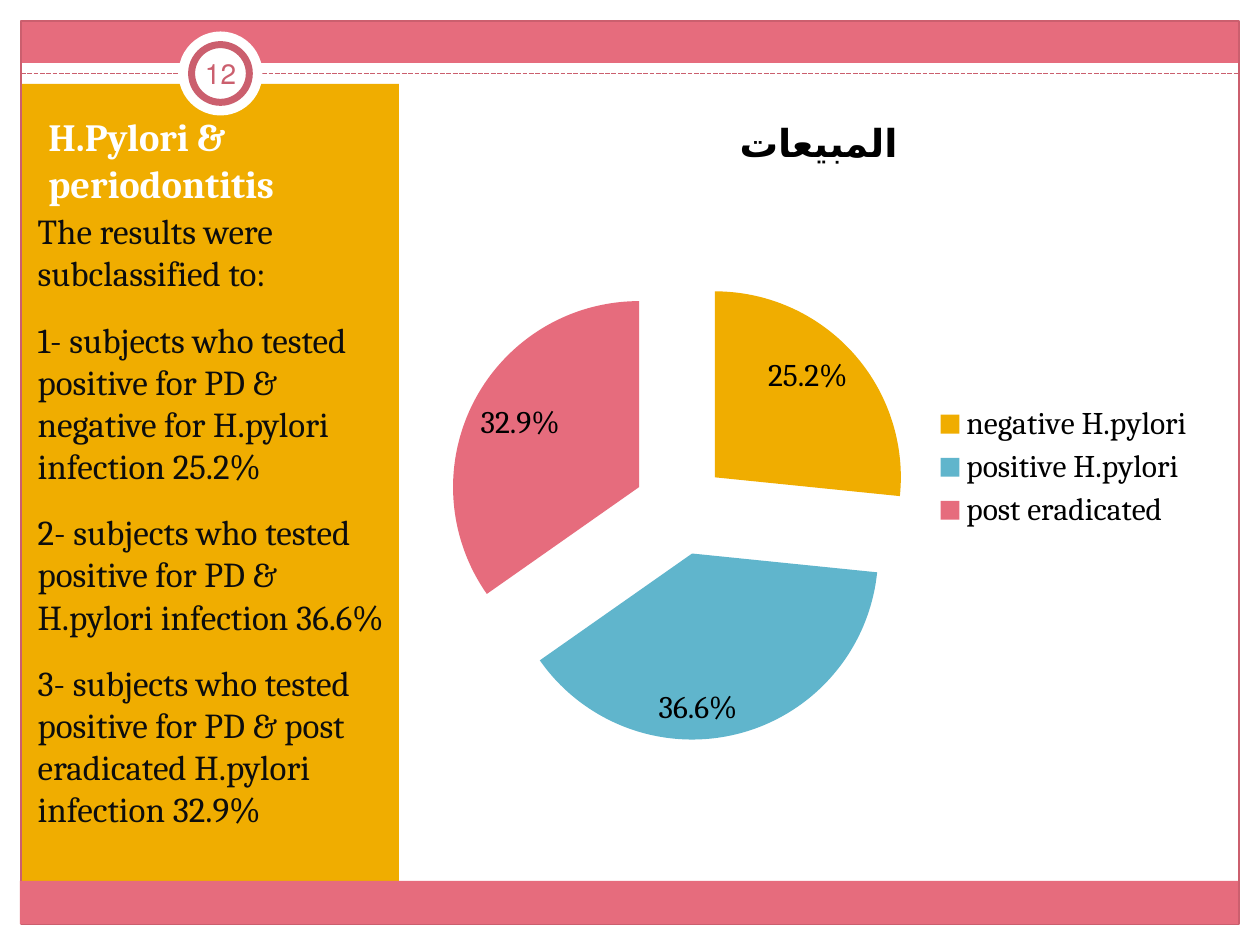
from dataclasses import dataclass
from typing import Optional

from lxml import etree
from pptx import Presentation
from pptx.chart.data import CategoryChartData
from pptx.dml.color import RGBColor
from pptx.enum.chart import XL_CHART_TYPE, XL_LABEL_POSITION, XL_LEGEND_POSITION
from pptx.enum.dml import MSO_LINE
from pptx.enum.shapes import MSO_CONNECTOR, MSO_SHAPE
from pptx.enum.text import MSO_ANCHOR, MSO_AUTO_SIZE, PP_ALIGN
from pptx.oxml.ns import qn
from pptx.util import Inches, Pt

RECTANGLE, OVAL = MSO_SHAPE.RECTANGLE, MSO_SHAPE.OVAL
LEFT, CENTER = PP_ALIGN.LEFT, PP_ALIGN.CENTER
TOP, MIDDLE, BOTTOM = MSO_ANCHOR.TOP, MSO_ANCHOR.MIDDLE, MSO_ANCHOR.BOTTOM
COLUMNS, ROWS = 120, 90
CELL = Inches(10) // COLUMNS


@dataclass(frozen=True)
class Theme:
    font: str = "Cambria"
    rose: str = "E66C7D"
    dark_rose: str = "CB5F6E"
    amber: str = "F0AD00"
    blue: str = "60B5CC"
    white: str = "FFFFFF"
    ink: str = "0D0D0D"
    black: str = "000000"
    title: float = 22
    body: float = 20
    chart: float = 18
    number: float = 16


THEME = Theme()


@dataclass(frozen=True)
class Area:
    column: float
    row: float
    columns: float
    rows: float

    def lengths(self) -> list[int]:
        return [round(n * CELL) for n in (self.column, self.row, self.columns, self.rows)]


@dataclass(frozen=True)
class Panel:
    area: Area
    fill: Optional[str] = None
    line: Optional[str] = None
    width: float = 0.75
    preset: int = RECTANGLE


@dataclass(frozen=True)
class Slice:
    name: str
    value: float
    label: str
    color: str


BACKDROP = [
    Panel(Area(2, 2, 116, 4), THEME.rose),
    Panel(Area(2, 8, 36, 77), THEME.amber),
    Panel(Area(2, 2, 116, 86), line=THEME.dark_rose),
]
BADGE = [
    Panel(Area(17, 3, 8, 8), THEME.white, preset=OVAL),
    Panel(Area(18.25, 4.25, 5.5, 5.5), THEME.white, THEME.dark_rose, 4, OVAL),
    Panel(Area(1.9, 83.9, 116, 4.1), THEME.rose),
]
FINDINGS = [
    "The results were subclassified to:",
    "1- subjects who tested positive for PD & negative for H.pylori infection 25.2%",
    "2- subjects who tested positive for PD & H.pylori infection 36.6%",
    "3- subjects who tested positive for PD & post eradicated H.pylori infection 32.9%",
]
CHART_TITLE = "المبيعات"
SLICES = [
    Slice("negative H.pylori", 26.61, "25.2%", THEME.amber),
    Slice("positive H.pylori", 38.65, "36.6%", THEME.blue),
    Slice("post eradicated", 34.74, "32.9%", THEME.rose),
]


def style_font(font, size: float, color: str, bold: bool = False) -> None:
    for name, value in {"name": THEME.font, "size": Pt(size), "bold": bold}.items():
        setattr(font, name, value)
    font.color.rgb = RGBColor.from_string(color)


def place(shape, area: Area) -> None:
    for name, length in zip(("left", "top", "width", "height"), area.lengths()):
        setattr(shape, name, length)


def draw_panel(slide, panel: Panel) -> None:
    shape = slide.shapes.add_shape(panel.preset, *panel.area.lengths())
    shape.shadow.inherit = False
    if panel.fill:
        shape.fill.solid()
        shape.fill.fore_color.rgb = RGBColor.from_string(panel.fill)
    else:
        shape.fill.background()
    if panel.line:
        shape.line.color.rgb = RGBColor.from_string(panel.line)
        shape.line.width = Pt(panel.width)
    else:
        shape.line.fill.background()


def draw_dashed_rule(slide, row: float) -> None:
    left, top, width, _ = Area(2, row, 116, 0).lengths()
    rule = slide.shapes.add_connector(MSO_CONNECTOR.STRAIGHT, left, top, left + width, top)
    rule.line.color.rgb = RGBColor.from_string(THEME.dark_rose)
    rule.line.width = Pt(0.9)
    rule.line.dash_style = MSO_LINE.SQUARE_DOT
    etree.SubElement(rule._element.spPr, qn("a:effectLst"))


def write(box, lines: list[str], size: float, color: str, bold: bool = False,
          align=LEFT, anchor=TOP, margin: Optional[float] = None) -> None:
    frame = box.text_frame
    settings = {"word_wrap": True, "auto_size": MSO_AUTO_SIZE.NONE, "vertical_anchor": anchor}
    if margin is not None:
        sides = ("left", "top", "right", "bottom")
        settings.update({f"margin_{side}": Inches(margin) for side in sides})
    for name, value in settings.items():
        setattr(frame, name, value)
    for index, line in enumerate(lines):
        para = frame.add_paragraph() if index else frame.paragraphs[0]
        para.alignment = align
        para.space_before = Pt(4 if index else 0)
        para.space_after = Pt(10 if len(lines) > 1 else 0)
        span = para.add_run()
        span.text = line
        style_font(span.font, size, color, bold)


def draw_pie(slide, area: Area) -> None:
    data = CategoryChartData()
    data.categories = [part.name for part in SLICES]
    data.add_series(CHART_TITLE, [part.value for part in SLICES])
    chart = slide.shapes.add_chart(XL_CHART_TYPE.PIE, *area.lengths(), data).chart
    style_font(chart.font, THEME.chart, THEME.black)

    chart.has_title = True
    title = chart.chart_title.text_frame
    title.text = CHART_TITLE
    style_font(title.paragraphs[0].runs[0].font, THEME.title, THEME.black, bold=True)
    chart.has_legend = True
    chart.legend.position = XL_LEGEND_POSITION.RIGHT
    chart.legend.include_in_layout = False

    plot = chart.plots[0]
    plot.vary_by_categories = True
    series = plot.series[0]
    labels = series.data_labels
    label_format = {"show_percentage": True, "show_value": False, "number_format": "0.00%",
                    "number_format_is_linked": False}
    for name, value in label_format.items():
        setattr(labels, name, value)
    for index, part in enumerate(SLICES):
        point = series.points[index]
        point.format.fill.solid()
        point.format.fill.fore_color.rgb = RGBColor.from_string(part.color)
        label = point.data_label
        label.text_frame.text = part.label
        style_font(label.text_frame.paragraphs[0].runs[0].font, THEME.chart, THEME.black)
        label.position = XL_LABEL_POSITION.INSIDE_END
    explosion = etree.Element(qn("c:explosion"), val="25")
    series._element.find(qn("c:dPt")).addprevious(explosion)


def main() -> None:
    deck = Presentation()
    deck.slide_width, deck.slide_height = COLUMNS * CELL, ROWS * CELL
    slide = deck.slides.add_slide(deck.slide_layouts[5])

    for panel in BACKDROP:
        draw_panel(slide, panel)
    draw_dashed_rule(slide, 7)
    for panel in BADGE:
        draw_panel(slide, panel)

    title = slide.shapes.title
    slide.shapes._spTree.append(title._element)  # brings the title in front of the panels
    place(title, Area(3.4, 6.2, 32.9, 14))
    write(title, ["H.Pylori & periodontitis"], THEME.title, THEME.white, bold=True, anchor=BOTTOM)

    findings = slide.shapes.add_textbox(*Area(2.4, 19.4, 35.9, 63.4).lengths())
    write(findings, FINDINGS, THEME.body, THEME.ink)
    draw_pie(slide, Area(41, 9, 74, 71))

    number = slide.shapes.add_textbox(*Area(18, 4.1, 6, 5.8).lengths())
    write(number, ["12"], THEME.number, THEME.dark_rose, align=CENTER, anchor=MIDDLE, margin=0.05)
    number.text_frame.paragraphs[0]._p.get_or_add_pPr().set("rtl", "1")
    deck.save("out.pptx")


if __name__ == "__main__":
    main()
